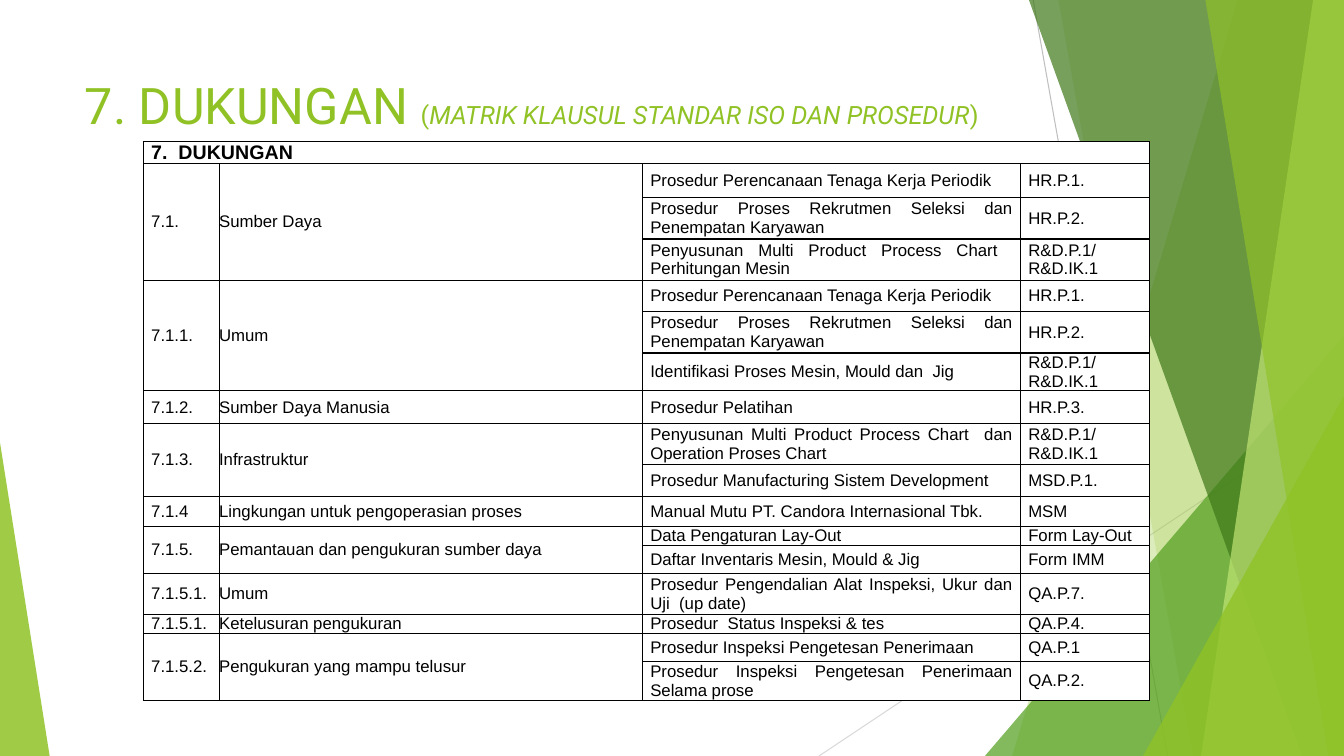
from dataclasses import dataclass

from lxml import etree
from pptx import Presentation
from pptx.dml.color import RGBColor
from pptx.enum.shapes import MSO_CONNECTOR, MSO_SHAPE
from pptx.enum.text import MSO_ANCHOR, MSO_AUTO_SIZE, PP_ALIGN
from pptx.oxml.ns import qn
from pptx.util import Pt

STRAIGHT = MSO_CONNECTOR.STRAIGHT
TRIANGLE = MSO_SHAPE.ISOSCELES_TRIANGLE
MIDDLE = MSO_ANCHOR.MIDDLE
JUSTIFY, LEFT = PP_ALIGN.JUSTIFY, PP_ALIGN.LEFT
NO_AUTOFIT = MSO_AUTO_SIZE.NONE
WIDTH, HEIGHT = 960, 540


@dataclass(frozen=True)
class Theme:
    lime: str = "90C226"
    pale_lime: str = "C0E474"
    green: str = "54A021"
    forest: str = "3F7819"
    ray: str = "BFBFBF"
    pale_ray: str = "D9D9D9"
    ink: str = "000000"
    paper: str = "FFFFFF"
    title_font: str = "Roboto"
    table_font: str = "Arial"
    title_size: float = 36
    subtitle_size: float = 18
    heading_size: float = 14
    cell_size: float = 12
    indent: float = 5.5


THEME = Theme()

COLUMN_WIDTHS = (54, 302.5, 270, 92)
HEADING = "7.  DUKUNGAN"
HEADING_HEIGHT = 12.5
PLANNING = "Prosedur Perencanaan Tenaga Kerja Periodik"
RECRUITING = "Prosedur Proses Rekrutmen Seleksi dan Penempatan Karyawan"
ENGINEERING_CODE = "R&D.P.1/ R&D.IK.1"

# Clause number, subject, then its procedures: (name, document code, row height)
CLAUSES = [
    ("7.1.", "Sumber Daya", [
        (PLANNING, "HR.P.1.", 24.5),
        (RECRUITING, "HR.P.2.", 29.5),
        ("Penyusunan Multi Product Process Chart  Perhitungan Mesin", ENGINEERING_CODE, 29.5)]),
    ("7.1.1.", "Umum", [
        (PLANNING, "HR.P.1.", 22.5),
        (RECRUITING, "HR.P.2.", 29.5),
        ("Identifikasi Proses Mesin, Mould dan  Jig", ENGINEERING_CODE, 23)]),
    ("7.1.2.", "Sumber Daya Manusia", [("Prosedur Pelatihan", "HR.P.3.", 23.5)]),
    ("7.1.3.", "Infrastruktur", [
        ("Penyusunan Multi Product Process Chart  dan Operation Proses Chart",
         ENGINEERING_CODE, 29.5),
        ("Prosedur Manufacturing Sistem Development", "MSD.P.1.", 22.5)]),
    ("7.1.4", "Lingkungan untuk pengoperasian proses", [
        ("Manual Mutu PT. Candora Internasional Tbk.", "MSM", 21.5)]),
    ("7.1.5.", "Pemantauan dan pengukuran sumber daya", [
        ("Data Pengaturan Lay-Out", "Form Lay-Out", 13),
        ("Daftar Inventaris Mesin, Mould & Jig", "Form IMM", 20)]),
    ("7.1.5.1.", "Umum", [
        ("Prosedur Pengendalian Alat Inspeksi, Ukur dan Uji  (up date)", "QA.P.7.", 29.5)]),
    ("7.1.5.1.", "Ketelusuran pengukuran", [
        ("Prosedur  Status Inspeksi & tes", "QA.P.4.", 12.5)]),
    ("7.1.5.2.", "Pengukuran yang mampu telusur", [
        ("Prosedur Inspeksi Pengetesan Penerimaan", "QA.P.1", 20),
        ("Prosedur Inspeksi Pengetesan Penerimaan Selama prose", "QA.P.2.", 28)]),
]


class SlideBuilder:
    def __init__(self, page, theme):
        self.page = page
        self.theme = theme

    def paint(self, shape, color, opacity):
        shape.shadow.inherit = False
        shape.fill.solid()
        shape.fill.fore_color.rgb = RGBColor.from_string(color)
        shape.line.fill.background()
        for tone in shape.element.spPr.xpath("./a:solidFill/a:srgbClr"):
            etree.SubElement(tone, qn("a:alpha"), val=str(opacity * 1000))

    def ray(self, start, end, color):
        line = self.page.shapes.add_connector(
            STRAIGHT, *(Pt(length) for length in (*start, *end)))
        line.line.color.rgb = RGBColor.from_string(color)
        line.line.width = Pt(0.75)
        etree.SubElement(line.element.spPr, qn("a:effectLst"))

    def facet(self, top_x, bottom_x, color, opacity):
        """Draw a full-height band from a slanted left edge to the slide's right edge."""
        outline = self.page.shapes.build_freeform(top_x, 0, scale=Pt(1))
        outline.add_line_segments([(WIDTH, 0), (WIDTH, HEIGHT), (bottom_x, HEIGHT)])
        self.paint(outline.convert_to_shape(), color, opacity)

    def corner(self, left, top, width, apex, color, opacity):
        """Draw a triangle that stands on the slide's bottom edge."""
        shape = self.page.shapes.add_shape(
            TRIANGLE, Pt(left), Pt(top), Pt(width), Pt(HEIGHT - top))
        shape.adjustments[0] = apex
        self.paint(shape, color, opacity)

    def style_span(self, span, font, size, color, bold=False, italic=False):
        span.font.name = font
        span.font.size = Pt(size)
        span.font.color.rgb = RGBColor.from_string(color)
        span.font.bold = bold
        span.font.italic = italic

    def title(self, spans, left, top, width, height):
        box = self.page.shapes.title
        box.left, box.top, box.width, box.height = map(Pt, (left, top, width, height))
        box.element.getparent().append(box.element)
        frame = box.text_frame
        frame.word_wrap = True
        frame.auto_size = NO_AUTOFIT
        frame.vertical_anchor = MIDDLE
        para = frame.paragraphs[0]
        para.alignment = LEFT
        for text, size, italic in spans:
            span = para.add_run()
            span.text = text
            self.style_span(span, self.theme.title_font, size, self.theme.lime, italic=italic)

    def frame_cell(self, cell):
        """Give a cell its black borders, white fill and zero margins."""
        properties = cell._tc.get_or_add_tcPr()
        for side in ("a:lnL", "a:lnR", "a:lnT", "a:lnB"):
            border = etree.SubElement(properties, qn(side), w=str(Pt(1)))
            fill = etree.SubElement(border, qn("a:solidFill"))
            etree.SubElement(fill, qn("a:srgbClr"), val=self.theme.ink)
        cell.fill.solid()
        cell.fill.fore_color.rgb = RGBColor.from_string(self.theme.paper)
        cell.margin_left = cell.margin_right = cell.margin_top = cell.margin_bottom = 0
        cell.vertical_anchor = MIDDLE

    def write_cell(self, cell, text, size, bold=False, indent=0, right_indent=0):
        para = cell.text_frame.paragraphs[0]
        para.text = text
        para.alignment = JUSTIFY
        properties = para._p.get_or_add_pPr()
        properties.set("marL", str(Pt(indent)))
        properties.set("marR", str(Pt(right_indent)))
        self.style_span(para.runs[0], self.theme.table_font, size, self.theme.ink, bold)

    def clause_table(self, left, top):
        theme = self.theme
        heights = [HEADING_HEIGHT] + [row[2] for clause in CLAUSES for row in clause[2]]
        table = self.page.shapes.add_table(
            len(heights), len(COLUMN_WIDTHS), Pt(left), Pt(top),
            Pt(sum(COLUMN_WIDTHS)), Pt(sum(heights))).table
        table.first_row = table.horz_banding = False
        for column, width in zip(table.columns, COLUMN_WIDTHS):
            column.width = Pt(width)
        for row, height in zip(table.rows, heights):
            row.height = Pt(height)
        for cell in table.iter_cells():
            self.frame_cell(cell)
            cell.text_frame.paragraphs[0].font.size = Pt(theme.cell_size)

        table.cell(0, 0).merge(table.cell(0, len(COLUMN_WIDTHS) - 1))
        self.write_cell(table.cell(0, 0), HEADING, theme.heading_size, True, theme.indent)
        first = 1
        for number, subject, procedures in CLAUSES:
            last = first + len(procedures) - 1
            for column, text, indent in ((0, number, theme.indent), (1, subject, 0)):
                if last > first:
                    table.cell(first, column).merge(table.cell(last, column))
                self.write_cell(table.cell(first, column), text, theme.cell_size, indent=indent)
            for index, (name, code, _) in enumerate(procedures, first):
                self.write_cell(table.cell(index, 2), name, theme.cell_size,
                                indent=theme.indent, right_indent=theme.indent)
                self.write_cell(table.cell(index, 3), code, theme.cell_size, indent=theme.indent)
            first = last + 1


def main():
    deck = Presentation()
    deck.slide_width, deck.slide_height = Pt(WIDTH), Pt(HEIGHT)
    builder = SlideBuilder(deck.slides.add_slide(deck.slide_layouts[5]), THEME)

    builder.ray((738, 0), (834, HEIGHT), THEME.ray)
    builder.ray((WIDTH, 290), (585, HEIGHT), THEME.pale_ray)
    builder.facet(884, 723, THEME.lime, 30)
    builder.facet(756, 852, THEME.lime, 20)
    builder.corner(703.5, 240, 256.5, 1, THEME.green, 72)
    builder.facet(735, 929.5, THEME.forest, 70)
    builder.facet(938, 858, THEME.pale_lime, 70)
    builder.facet(861, 949, THEME.lime, 65)
    builder.corner(816.5, 283, 143.5, 1, THEME.lime, 80)
    builder.corner(0, 316, 35.5, 0, THEME.lime, 85)

    builder.title([
        ("7. DUKUNGAN ", THEME.title_size, False),
        ("(", THEME.subtitle_size, False),
        ("MATRIK KLAUSUL STANDAR ISO DAN PROSEDUR", THEME.subtitle_size, True),
        (")", THEME.subtitle_size, False),
    ], 53.5, 48, 677, 53.5)
    builder.clause_table(102.5, 101)
    deck.save("out.pptx")


if __name__ == "__main__":
    main()
